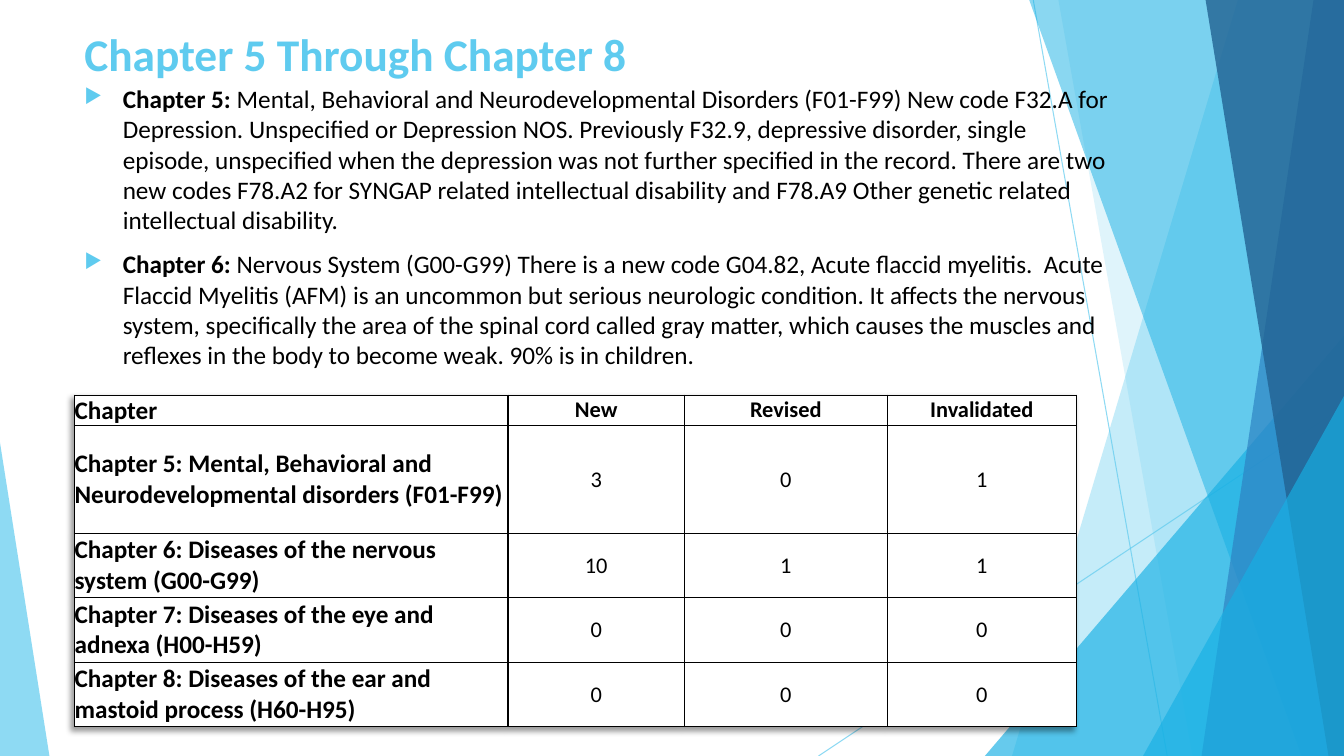
from lxml import etree
from pptx import Presentation
from pptx.dml.color import RGBColor
from pptx.enum.shapes import MSO_CONNECTOR, MSO_SHAPE
from pptx.enum.text import MSO_ANCHOR, PP_ALIGN
from pptx.oxml import parse_xml
from pptx.oxml.ns import qn
from pptx.util import Inches, Pt

STRAIGHT = MSO_CONNECTOR.STRAIGHT
TRIANGLE = MSO_SHAPE.ISOSCELES_TRIANGLE
MIDDLE, TOP = MSO_ANCHOR.MIDDLE, MSO_ANCHOR.TOP
LEFT, CENTER = PP_ALIGN.LEFT, PP_ALIGN.CENTER

SLIDE_WIDTH, SLIDE_HEIGHT = Inches(13.33), Inches(7.5)
FONT = "Calibri"
SKY = RGBColor(0x5F, 0xCB, 0xEF)
CYAN = RGBColor(0x17, 0xB0, 0xE4)
BLUE = RGBColor(0x2E, 0x83, 0xC3)
NAVY = RGBColor(0x22, 0x62, 0x92)
BLACK = RGBColor(0, 0, 0)
WHITE = RGBColor(255, 255, 255)

# Positions are percentages of the slide's width and height.
MARGIN = 5.55
RAYS = [(76.88, 0, 86.85, 100), (100, 53.73, 60.9, 100)]
# Top-left x, bottom-left x, colour, opacity; each ribbon reaches the right edge.
RIBBONS_BACK = [(92.1, 75.3, SKY, 36), (78.75, 88.73, SKY, 20)]
RIBBONS_FRONT = [(76.58, 96.83, CYAN, 50), (97.73, 89.4, BLUE, 70),
                 (89.7, 98.85, NAVY, 80)]

CHAPTER_NOTES = [
    ("Chapter 5:",
     " Mental, Behavioral and Neurodevelopmental Disorders (F01-F99) New code F32.A "
     "for Depression. Unspecified or Depression NOS. Previously F32.9, depressive "
     "disorder, single episode, unspecified when the depression was not further "
     "specified in the record. There are two new codes F78.A2 for SYNGAP related "
     "intellectual disability and F78.A9 Other genetic related intellectual disability."),
    ("Chapter 6:",
     " Nervous System (G00-G99) There is a new code G04.82, Acute flaccid myelitis.  "
     "Acute Flaccid Myelitis (AFM) is an uncommon but serious neurologic condition. "
     "It affects the nervous system, specifically the area of the spinal cord called "
     "gray matter, which causes the muscles and reflexes in the body to become weak. "
     "90% is in children."),
]
CODE_CHANGES = [
    ("Chapter", "New", "Revised", "Invalidated"),
    ("Chapter 5: Mental, Behavioral and Neurodevelopmental disorders (F01-F99)",
     "3", "0", "1"),
    ("Chapter 6: Diseases of the nervous system (G00-G99)", "10", "1", "1"),
    ("Chapter 7: Diseases of the eye and adnexa (H00-H59)", "0", "0", "0"),
    ("Chapter 8: Diseases of the ear and mastoid process (H60-H95)", "0", "0", "0"),
]
COLUMN_SHARES = [32.25, 13.13, 15.08, 14.1]
ROW_SHARES = [3.73, 14.27, 8.53, 8.53, 8.53]


def across(percent):
    return round(SLIDE_WIDTH * percent / 100)


def down(percent):
    return round(SLIDE_HEIGHT * percent / 100)


def box(left, top, width, height):
    return across(left), down(top), across(width), down(height)


def set_opacity(fill_owner, percent):
    color = next(fill_owner.iter(qn("a:srgbClr")))
    etree.SubElement(color, qn("a:alpha"), val=str(percent * 1000))


def paint(shape, color, opacity):
    shape.shadow.inherit = False
    shape.fill.solid()
    shape.fill.fore_color.rgb = color
    shape.line.fill.background()
    set_opacity(shape.fill._xPr, opacity)


def add_ray(slide, x1, y1, x2, y2):
    ray = slide.shapes.add_connector(STRAIGHT, across(x1), down(y1), across(x2), down(y2))
    ray.line.color.rgb = SKY
    ray.line.width = Pt(0.75)
    properties = ray._element.spPr
    set_opacity(properties, 70)
    etree.SubElement(properties, qn("a:effectLst"))


def add_ribbon(slide, top_x, bottom_x, color, opacity):
    outline = slide.shapes.build_freeform(across(top_x), 0)
    outline.add_line_segments([(SLIDE_WIDTH, 0), (SLIDE_WIDTH, SLIDE_HEIGHT),
                               (across(bottom_x), SLIDE_HEIGHT)])
    paint(outline.convert_to_shape(), color, opacity)


def add_corner(slide, left, top, width, apex, color, opacity):
    """Add a triangle standing on the bottom edge, with its apex at 0 (left) to 1 (right)."""
    corner = slide.shapes.add_shape(TRIANGLE, *box(left, top, width, 100 - top))
    corner.adjustments[0] = apex
    paint(corner, color, opacity)


def add_run(paragraph, text, size, bold, color=BLACK):
    run = paragraph.add_run()
    run.text = text
    run.font.name = FONT
    run.font.size = Pt(size)
    run.font.bold = bold
    run.font.color.rgb = color


def add_text_frame(slide, place, anchor):
    frame = slide.shapes.add_textbox(*box(*place)).text_frame
    frame.word_wrap = True
    frame.vertical_anchor = anchor
    return frame


def set_bullet(paragraph):
    paragraph.space_before = Pt(10)
    properties = paragraph._p.get_or_add_pPr()
    indent = Inches(0.38)
    properties.set("marL", str(indent))
    properties.set("indent", str(-indent))
    color = etree.SubElement(properties, qn("a:buClr"))
    etree.SubElement(color, qn("a:srgbClr"), val=str(SKY))
    etree.SubElement(properties, qn("a:buSzPct"), val="80000")
    etree.SubElement(properties, qn("a:buChar"), char="▶")


def add_notes(slide):
    frame = add_text_frame(slide, (MARGIN, 10.4, 77.93, 77.73), TOP)
    for index, (heading, detail) in enumerate(CHAPTER_NOTES):
        paragraph = frame.add_paragraph() if index else frame.paragraphs[0]
        set_bullet(paragraph)
        add_run(paragraph, heading, 18, True)
        add_run(paragraph, detail, 18, False)


def set_borders(cell):
    properties = cell._tc.get_or_add_tcPr()
    for side in ("lnL", "lnR", "lnT", "lnB"):
        border = etree.SubElement(properties, qn(f"a:{side}"), w=str(Pt(1)))
        fill = etree.SubElement(border, qn("a:solidFill"))
        etree.SubElement(fill, qn("a:srgbClr"), val=str(BLACK))


def fill_cell(cell, text, row, column):
    cell.margin_left = cell.margin_right = cell.margin_top = cell.margin_bottom = 0
    cell.vertical_anchor = MIDDLE
    set_borders(cell)
    cell.fill.solid()
    cell.fill.fore_color.rgb = WHITE
    paragraph = cell.text_frame.paragraphs[0]
    paragraph.alignment = CENTER if column else LEFT
    add_run(paragraph, text, 16 if column else 18, row == 0 or column == 0)


def add_table_shadow(table):
    table._tbl.tblPr.insert(0, parse_xml(
        '<a:effectLst xmlns:a="http://schemas.openxmlformats.org/drawingml/2006/main">'
        '<a:outerShdw blurRad="50800" dist="38100" dir="8100000" algn="tr" rotWithShape="0">'
        '<a:srgbClr val="000000"><a:alpha val="40000"/></a:srgbClr>'
        '</a:outerShdw></a:effectLst>'))


def add_code_table(slide):
    place = box(MARGIN, 52.27, sum(COLUMN_SHARES), sum(ROW_SHARES))
    table = slide.shapes.add_table(len(ROW_SHARES), len(COLUMN_SHARES), *place).table
    table.first_row = table.horz_banding = False
    add_table_shadow(table)
    for column, share in zip(table.columns, COLUMN_SHARES):
        column.width = across(share)
    for row, share in zip(table.rows, ROW_SHARES):
        row.height = down(share)
    for row, entries in enumerate(CODE_CHANGES):
        for column, entry in enumerate(entries):
            fill_cell(table.cell(row, column), entry, row, column)


def add_backdrop(slide):
    for ray in RAYS:
        add_ray(slide, *ray)
    for ribbon in RIBBONS_BACK:
        add_ribbon(slide, *ribbon)
    add_corner(slide, 73.28, 44.4, 26.72, 1, CYAN, 66)
    for ribbon in RIBBONS_FRONT:
        add_ribbon(slide, *ribbon)
    add_corner(slide, 85.05, 52.4, 14.95, 1, CYAN, 66)
    add_corner(slide, 0, 58.53, 3.68, 0, SKY, 70)


def main():
    deck = Presentation()
    deck.slide_width, deck.slide_height = SLIDE_WIDTH, SLIDE_HEIGHT
    slide = deck.slides.add_slide(deck.slide_layouts[6])
    add_backdrop(slide)
    title = add_text_frame(slide, (MARGIN, 2.4, 70.5, 9.33), MIDDLE)
    add_run(title.paragraphs[0], "Chapter 5 Through Chapter 8", 32.4, True, SKY)
    add_notes(slide)
    add_code_table(slide)
    deck.save("out.pptx")


if __name__ == "__main__":
    main()
